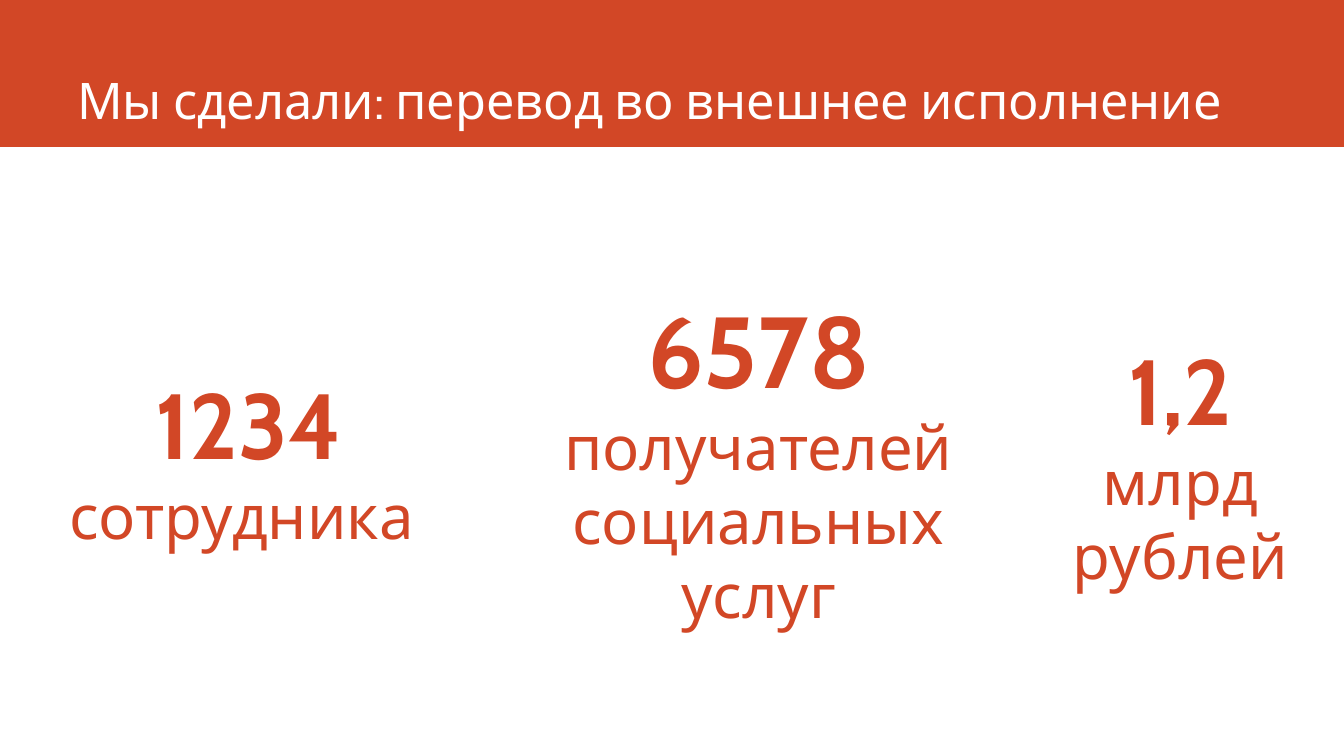
from pptx import Presentation
from pptx.dml.color import RGBColor
from pptx.enum.shapes import MSO_SHAPE as Preset
from pptx.enum.text import MSO_ANCHOR as Anchor, MSO_AUTO_SIZE as AutoSize, PP_ALIGN as Align
from pptx.util import Pt

ORANGE = RGBColor(0xD2, 0x47, 0x26)
WHITE = RGBColor(0xFF, 0xFF, 0xFF)
FONT = "Cabin"
SLIDE_WIDTH, SLIDE_HEIGHT = 960, 540


def write(paragraph, text, size, color=ORANGE, bold=False, align=Align.CENTER):
    paragraph.alignment = align
    run = paragraph.add_run()
    run.text = text
    run.font.name = FONT
    run.font.size = Pt(size)
    run.font.bold = bold
    run.font.color.rgb = color


def add_panel(slide, left, top, width, height, color):
    panel = slide.shapes.add_shape(
        Preset.RECTANGLE, Pt(left), Pt(top), Pt(width), Pt(height))
    panel.shadow.inherit = False
    panel.fill.solid()
    panel.fill.fore_color.rgb = color
    panel.line.color.rgb = color
    panel.line.width = Pt(1)
    return panel


def add_header(slide, left, top, width, height, text):
    band = add_panel(slide, left, top, width, height, ORANGE)
    band.line.fill.background()
    title = slide.shapes.title
    title.element.addprevious(band.element)
    title.left, title.top = Pt(left + 48), Pt(top)
    title.width, title.height = Pt(width - 114), Pt(height - 8.5)
    frame = title.text_frame
    frame.word_wrap = True
    frame.auto_size = AutoSize.NONE
    frame.vertical_anchor = Anchor.BOTTOM
    write(frame.paragraphs[0], text, 36, WHITE, align=Align.LEFT)


def add_result(slide, left, top, width, height, figure, caption, size, inline=False):
    frame = add_panel(slide, left, top, width, height, WHITE).text_frame
    frame.word_wrap = True
    frame.vertical_anchor = Anchor.MIDDLE
    first = frame.paragraphs[0]
    write(first, figure, size, bold=True)
    write(first if inline else frame.add_paragraph(), caption, 44)


def main():
    deck = Presentation()
    deck.slide_width, deck.slide_height = Pt(SLIDE_WIDTH), Pt(SLIDE_HEIGHT)
    slide = deck.slides.add_slide(deck.slide_layouts[5])
    add_header(slide, 0, 0, SLIDE_WIDTH, 105,
               "Мы сделали: перевод во внешнее исполнение")
    add_result(slide, 12.25, 174.25, 330.5, 307.5, "1234", "сотрудника ", 66)
    add_result(slide, 363.6, 174.25, 356.4, 307.5, "6578 ",
               "получателей социальных услуг", 72, inline=True)
    add_result(slide, 732.25, 202.3, 221.75, 256.3, "1,2", "млрд рублей", 66)
    deck.save("out.pptx")


if __name__ == "__main__":
    main()
